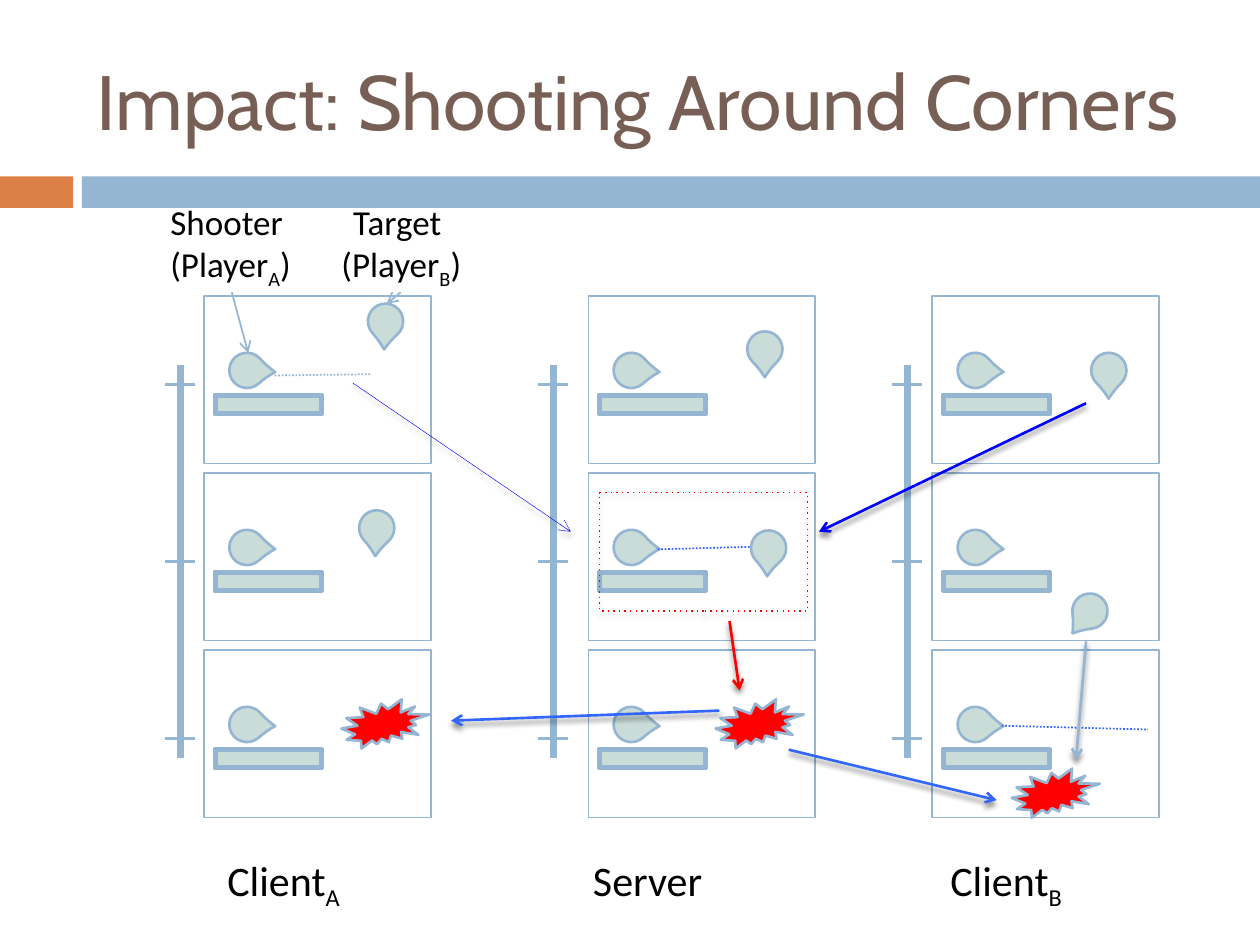
"""Build the slide on how network delay lets players shoot around corners."""
from lxml import etree
from pptx import Presentation
from pptx import util as u
from pptx.dml.color import RGBColor
from pptx.enum import shapes, text
from pptx.oxml import ns

WHITE = RGBColor(0xFF, 0xFF, 0xFF)
BLACK = RGBColor(0x00, 0x00, 0x00)
BROWN = RGBColor(0x77, 0x5F, 0x55)
ORANGE = RGBColor(0xDD, 0x80, 0x47)
STEEL = RGBColor(0x94, 0xB6, 0xD2)
SAGE = RGBColor(0xCA, 0xDC, 0xD8)
RED = RGBColor(0xFF, 0x00, 0x00)
BLUE = RGBColor(0x00, 0x00, 0xFF)
SKY = RGBColor(0x33, 0x66, 0xFF)

KIND = shapes.MSO_SHAPE
COLUMNS = [(1.62, 1.43), (4.67, 4.39), (7.4, 7.2)]
TOP = 2.35
ROW_STEP = 1.405
TARGETS = [(2.92, 2.41, 138), (2.85, 4.05, 138), (5.93, 2.63, 135.2),
           (5.96, 4.21, 138), (8.66, 2.8, 135.2), (8.51, 4.71, 173.1)]
BURSTS = [(2.71, 5.55), (5.68, 5.55), (8.03, 6.1)]
SHOTS = [((2.18, 2.98), (2.95, 2.97), STEEL),
         ((5.22, 4.36), (5.96, 4.34), SKY),
         ((7.95, 5.76), (9.11, 5.79), SKY)]
POINTERS = [((1.84, 2.32), (1.97, 2.8)), ((3.18, 2.32), (3.07, 2.41))]
MESSAGES = [((2.8, 3.04), (4.53, 4.22), BLUE, 0.25),
            ((8.62, 3.2), (6.5, 4.22), BLUE, 1.5),
            ((8.62, 5.09), (8.54, 6.03), STEEL, 1.5),
            ((5.79, 4.93), (5.87, 5.48), RED, 1.5),
            ((5.71, 5.64), (3.58, 5.72), SKY, 1.5),
            ((6.26, 5.95), (7.91, 6.35), SKY, 1.5)]
CAPTIONS = [("Client|A", 1.39, 1.72), ("Server", 4.28, 1.72), ("Client|B", 6.85, 2.27)]
ROLES = [("Shooter \n(Player|A|)", 1.24, 1.18), ("Target \n(Player|B|)", 2.6, 1.17)]


def add_child(parent, tag, **attributes):
    return etree.SubElement(parent, ns.qn(tag), **attributes)


def write(box, content, size=24, font="Calibri", color=BLACK,
          align=text.PP_ALIGN.CENTER):
    """Fill a box line by line; every second part between bars is a subscript."""
    frame = box.text_frame
    for number, line in enumerate(content.split("\n")):
        para = frame.add_paragraph() if number else frame.paragraphs[0]
        para.alignment = align
        for part, words in enumerate(line.split("|")):
            span = para.add_run()
            span.text = words
            span.font.size = u.Pt(size)
            span.font.name = font
            span.font.color.rgb = color
            if part % 2:
                span.font._element.set("baseline", "-25000")


class Painter:
    """Hold the slide and draw each kind of element in one style."""

    def __init__(self, slide):
        self.slide = slide

    def outline(self, item, color, width, dash=None):
        item.line.color.rgb = color
        item.line.width = u.Pt(width)
        if dash:
            add_child(item.line._get_or_add_ln(), "a:prstDash", val=dash)

    def cast_shadow(self, effects):
        shadow = add_child(effects, "a:outerShdw", blurRad=str(u.Pt(3)),
                           dist=str(u.Pt(2.4)), dir="5400000", rotWithShape="0")
        black = add_child(shadow, "a:srgbClr", val=str(BLACK))
        add_child(black, "a:alpha", val="45000")

    def shape(self, kind, left, top, width, height, fill=None, line=STEEL,
              weight=1.5, dash=None, turn=0, shadow=False):
        item = self.slide.shapes.add_shape(
            kind, u.Inches(left), u.Inches(top), u.Inches(width), u.Inches(height))
        item.rotation = turn
        if fill is None:
            item.fill.background()
        else:
            item.fill.solid()
            item.fill.fore_color.rgb = fill
        if line is None:
            item.line.fill.background()
        else:
            self.outline(item, line, weight, dash)
        item.shadow.inherit = False
        if shadow:
            self.cast_shadow(item._element.spPr.find(ns.qn("a:effectLst")))
        return item

    def line(self, start, end, color=STEEL, weight=1, dash=None,
             arrow=False, shadow=False):
        item = self.slide.shapes.add_connector(
            shapes.MSO_CONNECTOR.STRAIGHT, *(u.Inches(n) for n in (*start, *end)))
        self.outline(item, color, weight, dash)
        if arrow:
            add_child(item.line._get_or_add_ln(), "a:tailEnd", type="arrow")
        effects = add_child(item._element.spPr, "a:effectLst")
        if shadow:
            self.cast_shadow(effects)

    def player(self, left, top, turn):
        drop = self.shape(KIND.TEAR, left, top, 0.28, 0.28, fill=SAGE, turn=turn)
        drop.adjustments[0] = 1.133

    def label(self, content, left, top, width, height, wrap=True,
              anchor=text.MSO_ANCHOR.TOP, **style):
        box = self.slide.shapes.add_textbox(
            u.Inches(left), u.Inches(top), u.Inches(width), u.Inches(height))
        box.text_frame.word_wrap = wrap
        box.text_frame.vertical_anchor = anchor
        write(box, content, **style)

    def timeline(self, axis):
        self.line((axis, 2.9), (axis, 6.02), weight=4)
        for row in range(3):
            tick = 3.05 + row * ROW_STEP
            self.line((axis - 0.12, tick), (axis + 0.12, tick), weight=1.75)

    def scene(self, left, top):
        self.shape(KIND.RECTANGLE, left, top, 1.8, 1.33, weight=1)
        self.player(left + 0.2, top + 0.45, 48.2)
        self.shape(KIND.BEVEL, left + 0.08, top + 0.78, 0.86, 0.16, fill=SAGE)


def main():
    deck = Presentation()
    deck.slide_width, deck.slide_height = u.Inches(10), u.Inches(7.5)
    page = deck.slides.add_slide(deck.slide_layouts[6])
    page.background.fill.solid()
    page.background.fill.fore_color.rgb = WHITE
    painter = Painter(page)

    painter.shape(KIND.RECTANGLE, 0, 1.4, 0.58, 0.25, fill=ORANGE, line=None)
    painter.shape(KIND.RECTANGLE, 0.65, 1.4, 9.35, 0.25, fill=STEEL, line=None)
    painter.label("Impact: Shooting Around Corners", 0.67, 0.25, 8.92, 1.08,
                  anchor=text.MSO_ANCHOR.MIDDLE, size=44, font="Cabin",
                  color=BROWN, align=text.PP_ALIGN.LEFT)

    for left, axis in COLUMNS:
        painter.timeline(axis)
        for row in range(3):
            painter.scene(left, TOP + row * ROW_STEP)
    for target in TARGETS:
        painter.player(*target)
    for start, end, color in SHOTS:
        painter.line(start, end, color, dash="sysDot")
    for left, top in BURSTS:
        painter.shape(KIND.EXPLOSION2, left, top, 0.7, 0.39, fill=RED)

    for caption, left, width in CAPTIONS:
        painter.label(caption, left, 6.73, width, 0.51)
    for role, left, width in ROLES:
        painter.label(role, left, 1.54, width, 0.77, wrap=False, size=20)
    for start, end in POINTERS:
        painter.line(start, end, arrow=True)

    painter.shape(KIND.RECTANGLE, 4.76, 3.91, 1.65, 0.94, line=RED,
                  weight=0.79, dash="dot", shadow=True)
    for start, end, color, weight in MESSAGES:
        painter.line(start, end, color, weight, arrow=True, shadow=True)

    deck.save("out.pptx")


if __name__ == "__main__":
    main()
